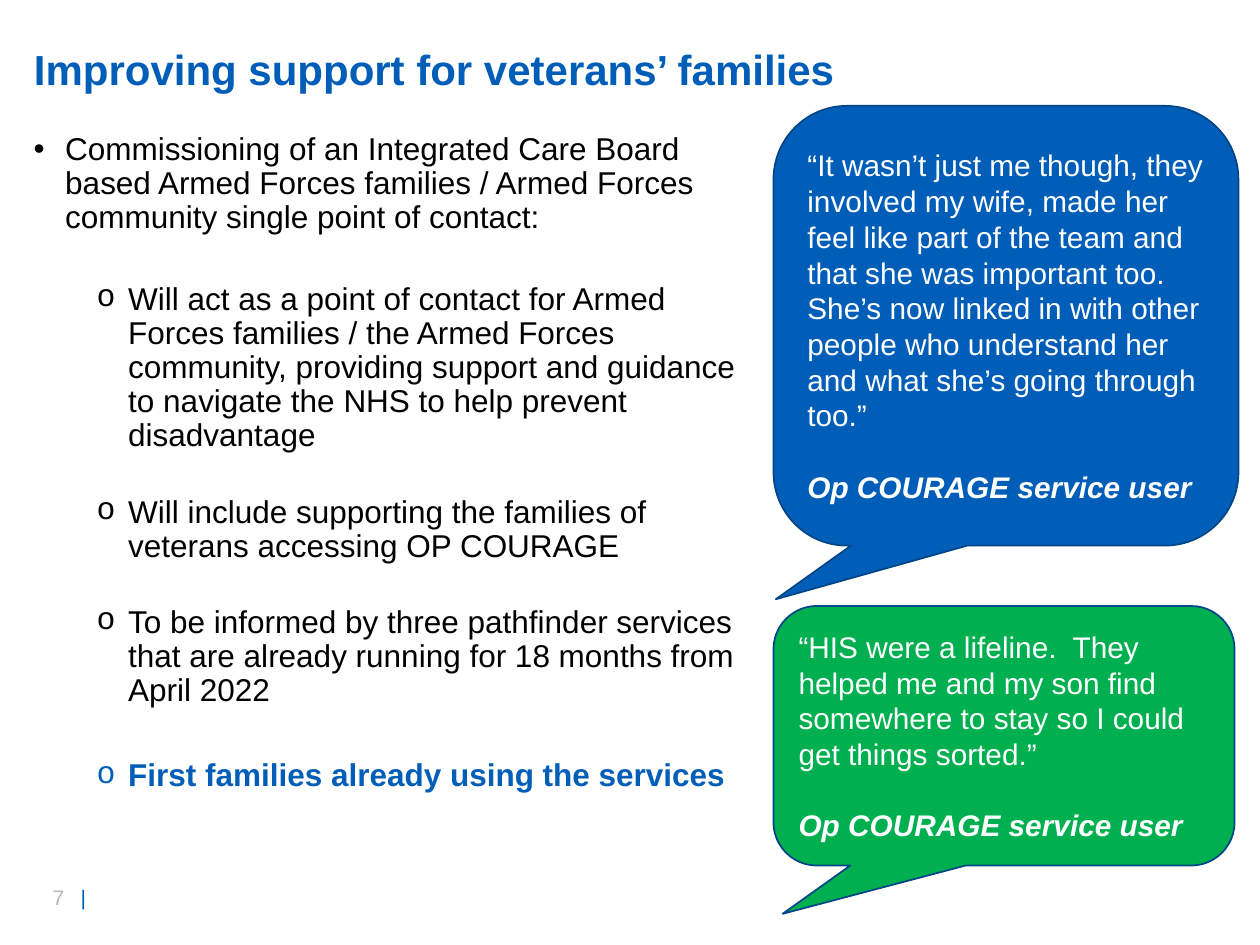
import pptx
import pptx.dml.color
import pptx.enum.shapes
import pptx.enum.text
import pptx.oxml.ns
import pptx.util
from lxml import etree

Pt = pptx.util.Pt
FONT = "Arial"
BLUE, GREEN, OUTLINE = "005EB8", "00B050", "004688"
BLACK, WHITE, GREY = "000000", "FFFFFF", "ADB6BE"

TITLE = "Improving support for veterans’ families"
LEAD = ("Commissioning of an Integrated Care Board based Armed Forces families / "
        "Armed Forces community single point of contact:")
# Wording, space before, colour, bold
SUB_POINTS = [
    ("Will act as a point of contact for Armed Forces families / the Armed Forces "
     "community, providing support and guidance to navigate the NHS to help prevent "
     "disadvantage", 27, BLACK, False),
    ("Will include supporting the families of veterans accessing OP COURAGE",
     24.5, BLACK, False),
    ("To be informed by three pathfinder services that are already running for "
     "18 months from April 2022", 24, BLACK, False),
    ("First families already using the services", 29.5, BLUE, True),
]
SPEAKER = "Op COURAGE service user"
WIFE_QUOTE = ("“It wasn’t just me though, they involved my wife, made her feel like part "
              "of the team and that she was important too. She’s now linked in with other "
              "people who understand her and what she’s going through too.”")
SON_QUOTE = ("“HIS were a lifeline.  They helped me and my son find somewhere to stay "
             "so I could get things sorted.”")


def rgb(hex_colour):
    return pptx.dml.color.RGBColor.from_string(hex_colour)


def set_font(font, size, colour, bold=False, italic=False):
    font.name, font.size = FONT, Pt(size)
    font.bold, font.italic = bold, italic
    font.color.rgb = rgb(colour)


def add_properties(paragraph, *elements):
    """Append (tag, attributes) pairs to the paragraph properties."""
    properties = paragraph._p.get_or_add_pPr()
    for tag, attributes in elements:
        etree.SubElement(properties, pptx.oxml.ns.qn(tag), attributes)
    return properties


def add_bullet(paragraph, character, typeface, left):
    properties = add_properties(paragraph, ("a:buFont", {"typeface": typeface}),
                                ("a:buChar", {"char": character}))
    properties.set("marL", str(Pt(left)))
    properties.set("indent", str(Pt(-18)))


def place_title(slide, left, top, width, height):
    title = slide.shapes.title
    title.left, title.top, title.width, title.height = map(Pt, (left, top, width, height))
    frame = title.text_frame
    frame.text = TITLE
    frame.auto_size = pptx.enum.text.MSO_AUTO_SIZE.NONE
    frame.vertical_anchor = pptx.enum.text.MSO_ANCHOR.TOP
    heading = frame.paragraphs[0]
    heading.alignment = pptx.enum.text.PP_ALIGN.LEFT
    heading.line_spacing = 0.9
    set_font(heading.font, 24, BLUE, bold=True)


def add_points(slide, left, top, width, height):
    frame = slide.shapes.add_textbox(*map(Pt, (left, top, width, height))).text_frame
    frame.word_wrap = True
    lead = frame.paragraphs[0]
    lead.text = LEAD
    add_bullet(lead, "•", FONT, 18)
    lead.line_spacing = 0.9
    set_font(lead.font, 18, BLACK)
    for wording, gap, colour, bold in SUB_POINTS:
        point = frame.add_paragraph()
        point.text = wording
        point.level = 1
        add_bullet(point, "o", "Courier New", 54)
        point.line_spacing = 0.9
        point.space_before = Pt(gap)
        set_font(point.font, 18, colour, bold)


def add_quote(slide, left, top, width, height, fill, tail, quote):
    bubble = slide.shapes.add_shape(
        pptx.enum.shapes.MSO_SHAPE.ROUNDED_RECTANGULAR_CALLOUT,
        *map(Pt, (left, top, width, height)))
    bubble.shadow.inherit = False
    for index, value in enumerate((*tail, 0.167)):
        bubble.adjustments[index] = value
    bubble.fill.solid()
    bubble.fill.fore_color.rgb = rgb(fill)
    bubble.line.color.rgb = rgb(OUTLINE)
    bubble.line.width = Pt(1)
    frame = bubble.text_frame
    frame.word_wrap = True
    frame.vertical_anchor = pptx.enum.text.MSO_ANCHOR.MIDDLE
    saying, speaker = frame.paragraphs[0], frame.add_paragraph()
    saying.text, speaker.text = quote, SPEAKER
    speaker.space_before = Pt(20.4)
    for paragraph, stressed in ((saying, False), (speaker, True)):
        paragraph.alignment = pptx.enum.text.PP_ALIGN.LEFT
        set_font(paragraph.font, 17, WHITE, bold=stressed, italic=stressed)


def add_page_number(slide, left, top, width, height):
    frame = slide.shapes.add_textbox(*map(Pt, (left, top, width, height))).text_frame
    frame.word_wrap = False
    footer = frame.paragraphs[0]
    tabs = add_properties(footer, ("a:tabLst", {}))[-1]
    etree.SubElement(tabs, pptx.oxml.ns.qn("a:tab"), {"pos": str(Pt(16)), "algn": "l"})
    for wording, colour in (("7\t", GREY), ("|", BLUE)):
        run = footer.add_run()
        run.text = wording
        set_font(run.font, 12, colour)


def main():
    deck = pptx.Presentation()
    deck.slide_width, deck.slide_height = Pt(720), Pt(540)
    slide = deck.slides.add_slide(deck.slide_layouts[5])
    add_page_number(slide, 23, 501.8, 51, 21.6)
    place_title(slide, 12.2, 24.5, 627, 39.6)
    add_points(slide, 12.2, 72.7, 422, 176.4)
    # Service users' quotes
    add_quote(slide, 442, 60.5, 265.7, 251.3, BLUE, (-0.495, 0.622), WIFE_QUOTE)
    add_quote(slide, 442, 346.3, 263.5, 148.3, GREEN, (-0.48, 0.686), SON_QUOTE)
    deck.save("out.pptx")


if __name__ == "__main__":
    main()
